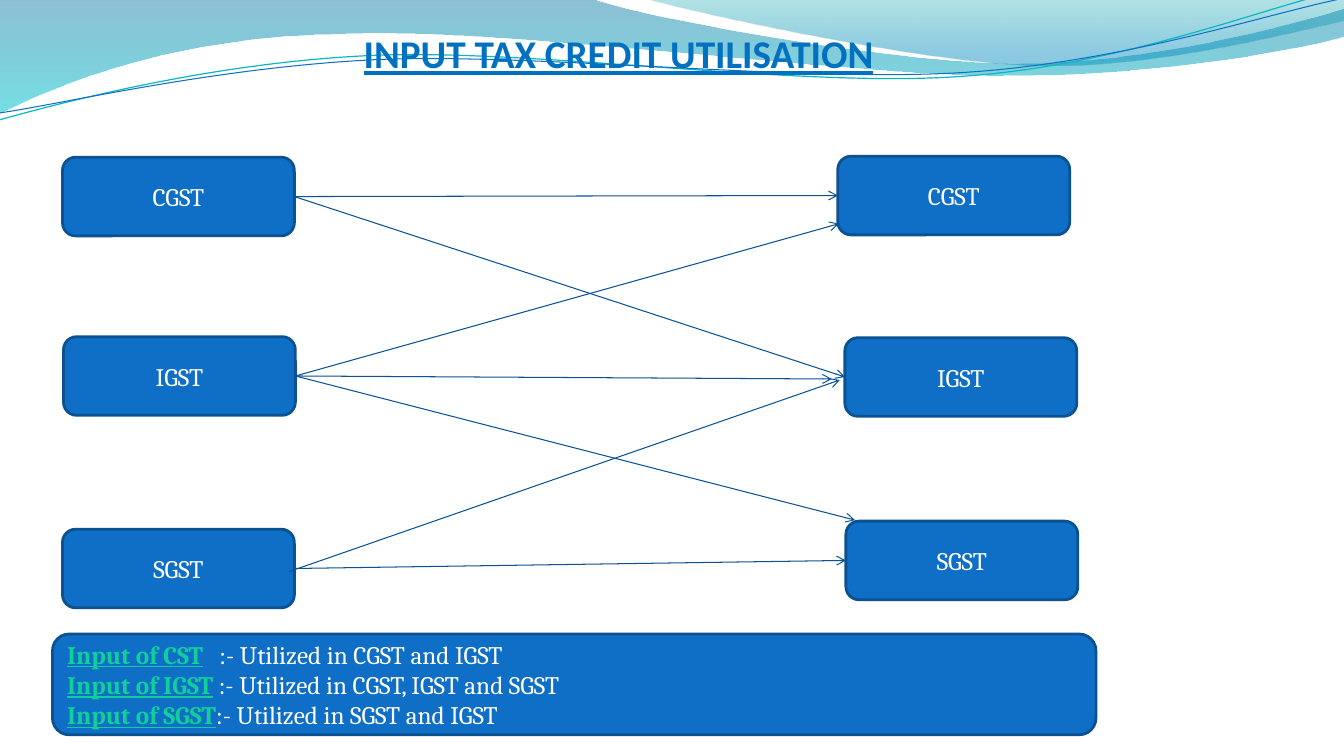
from lxml import etree
from pptx import Presentation
from pptx.dml.color import RGBColor
from pptx.enum.shapes import MSO_CONNECTOR as CONN, MSO_SHAPE as SHAPE
from pptx.enum.text import MSO_ANCHOR as ANCHOR, MSO_AUTO_SIZE as AUTO, PP_ALIGN as ALIGN
from pptx.oxml.ns import qn
from pptx.util import Inches, Pt

BLUE = RGBColor(0x0F, 0x6F, 0xC6)
BORDER = RGBColor(0x0B, 0x52, 0x92)
ARROW = RGBColor(0x09, 0x52, 0x95)
TITLE = RGBColor(0x00, 0x70, 0xC0)
GREEN = RGBColor(0x10, 0xCF, 0x9B)
WHITE = RGBColor(0xFF, 0xFF, 0xFF)
TEAL = RGBColor(0x0A, 0xB8, 0xBF)

BOX_W, BOX_H = 2.3, 0.78
LEFT, RIGHT = 1, 3  # connection sites

# Header outlines: a start point, then steps of one point (straight line)
# or three points (curve: control, control, end)
LOWER_WAVE = [
    [(0, 0)],
    [(5.87, -0.01)],
    [(6.34, 0.17), (8.85, 0.63), (10.11, 0.63)],
    [(11.38, 0.63), (12.78, 0.26), (13.33, 0.09)],
    [(13.35, 0.36)],
    [(13.11, 0.44), (11.6, 0.76), (9.94, 0.75)],
    [(8.29, 0.75), (5.09, 0.28), (3.43, 0.34)],
    [(1.72, 0.36), (0.61, 0.83), (-0.01, 1.13)],
    [(0, 0)],
]
UPPER_WAVE = [
    [(6.39, -0.01)],
    [(6.79, 0.11), (9.09, 0.62), (10.25, 0.65)],
    [(11.41, 0.69), (12.82, 0.32), (13.33, 0.21)],
    [(13.33, 0)],
    [(6.39, -0.01)],
]
TEAL_STRAND = [
    [(-0.01, 1.19)],
    [(0.64, 1.01), (2.11, 0.62), (3.69, 0.55)],
    [(5.27, 0.48), (7.9, 0.87), (9.5, 0.76)],
    [(11.1, 0.66), (12.52, 0.08), (13.31, -0.1)],
]
BLUE_STRAND = [
    [(0, 1.12)],
    [(0.63, 1.03), (2.18, 0.66), (3.78, 0.59)],
    [(5.37, 0.53), (7.96, 0.82), (9.55, 0.72)],
    [(11.15, 0.62), (12.55, 0.14), (13.34, -0.02)],
]

NOTES = [
    ("Input of CST", "\t:- Utilized in CGST and IGST"),
    ("Input of IGST", " :- Utilized in CGST, IGST and SGST"),
    ("Input of SGST", ":- Utilized in SGST and IGST"),
]


def add_outline(s, steps, close):
    steps = [[(Inches(x), Inches(y)) for x, y in step] for step in steps]
    builder = s.shapes.build_freeform(*steps[0][0])
    builder.add_line_segments([step[-1] for step in steps[1:]], close=close)
    sp = builder.convert_to_shape()
    sp.shadow.inherit = False
    # Bend the three-point steps into curves
    outline = next(sp._element.iter(qn("a:path")))
    for line, step in zip(outline.findall(qn("a:lnTo")), steps[1:]):
        if len(step) == 3:
            curve = etree.SubElement(outline, qn("a:cubicBezTo"))
            for x, y in step:
                etree.SubElement(curve, qn("a:pt"), x=str(x - sp.left), y=str(y - sp.top))
            outline.replace(line, curve)
    return sp


def add_wave(s, steps, stops):
    sp = add_outline(s, steps, True)
    sp.line.fill.background()
    sp.fill.gradient()
    sp.fill.gradient_angle = 270
    for stop, (position, color, _) in zip(sp.fill.gradient_stops, stops):
        stop.position = position
        stop.color.rgb = RGBColor.from_string(color)
    colors = sp._element.spPr.iter(qn("a:srgbClr"))
    for clr, (_, _, opacity) in zip(colors, stops):
        etree.SubElement(clr, qn("a:alpha"), val=str(opacity * 1000))


def add_strand(s, steps, color, width):
    sp = add_outline(s, steps, False)
    sp.fill.background()
    sp.line.color.rgb = color
    sp.line.width = Pt(width)


def add_run(p, text, color, **extra):
    r = p.add_run()
    r.text = text
    for name, value in {"size": Pt(18), "name": "Cambria", **extra}.items():
        setattr(r.font, name, value)
    r.font.color.rgb = color


def add_box(s, x, y, w=BOX_W, h=BOX_H):
    sp = s.shapes.add_shape(SHAPE.ROUNDED_RECTANGLE, Inches(x), Inches(y), Inches(w), Inches(h))
    sp.shadow.inherit = False
    sp.fill.solid()
    sp.fill.fore_color.rgb = BLUE
    sp.line.color.rgb = BORDER
    sp.line.width = Pt(2)
    sp.text_frame.vertical_anchor = ANCHOR.MIDDLE
    return sp


def add_tax_box(s, label, x, y):
    sp = add_box(s, x, y)
    p = sp.text_frame.paragraphs[0]
    p.alignment = ALIGN.CENTER
    add_run(p, label, WHITE)
    return sp


def add_arrow(s, start, end):
    """Each end is a box, joined at its side, or a point."""
    points = [Inches(v) for end_at in (start, end)
              for v in (end_at if isinstance(end_at, tuple) else (0, 0))]
    c = s.shapes.add_connector(CONN.STRAIGHT, *points)
    if not isinstance(start, tuple):
        c.begin_connect(start, RIGHT)
    if not isinstance(end, tuple):
        c.end_connect(end, LEFT)
    c.line.color.rgb = ARROW
    c.line.width = Pt(0.75)
    etree.SubElement(c.line._get_or_add_ln(), qn("a:tailEnd"), type="arrow")
    etree.SubElement(c._element.spPr, qn("a:effectLst"))


def add_title(s, text):
    sp = s.shapes.title
    s.shapes._spTree.append(sp._element)  # in front of the waves
    place = {"left": 0.08, "top": 0.12, "width": 12.11, "height": 0.64}
    for name, value in place.items():
        setattr(sp, name, Inches(value))
    tf = sp.text_frame
    frame = {"margin_left": 0, "margin_right": 0, "margin_top": Inches(0.05),
             "margin_bottom": 0, "vertical_anchor": ANCHOR.BOTTOM,
             "auto_size": AUTO.NONE, "word_wrap": True}
    for name, value in frame.items():
        setattr(tf, name, value)
    p = tf.paragraphs[0]
    p.alignment = ALIGN.CENTER
    add_run(p, text, TITLE, size=Pt(28), name="Calibri", bold=True, underline=True)


def add_notes_box(s):
    tf = add_box(s, 0.52, 6.29, 10.35, 1).text_frame
    for i, (head, use) in enumerate(NOTES):
        p = tf.add_paragraph() if i else tf.paragraphs[0]
        p.alignment = ALIGN.LEFT
        if use.startswith("\t"):
            tabs = etree.SubElement(p._p.get_or_add_pPr(), qn("a:tabLst"))
            etree.SubElement(tabs, qn("a:tab"), pos=str(Inches(1.51)), algn="l")
        add_run(p, head, GREEN, bold=True, underline=True)
        add_run(p, use, WHITE)


def main():
    prs = Presentation()
    prs.slide_width, prs.slide_height = Inches(13.33), Inches(7.5)
    s = prs.slides.add_slide(prs.slide_layouts[5])

    # Header
    add_wave(s, LOWER_WAVE, [(0, "0074A1", 45), (1, "00C6CF", 55)])
    add_wave(s, UPPER_WAVE, [(0, "00A1A9", 30), (0.8, "008BBF", 45)])
    add_strand(s, TEAL_STRAND, TEAL, 0.85)
    add_strand(s, BLUE_STRAND, BLUE, 0.75)
    add_title(s, "INPUT TAX CREDIT UTILISATION")

    # Input credits on the left, taxes they pay on the right
    cgst_in = add_tax_box(s, "CGST", 0.62, 1.56)
    igst_in = add_tax_box(s, "IGST", 0.63, 3.34)
    sgst_in = add_tax_box(s, "SGST", 0.62, 5.25)
    cgst_out = add_tax_box(s, "CGST", 8.31, 1.55)
    igst_out = add_tax_box(s, "IGST", 8.38, 3.35)
    sgst_out = add_tax_box(s, "SGST", 8.39, 5.17)

    # Permitted uses
    for start, end in [
        (cgst_in, cgst_out), (cgst_in, igst_out), (sgst_in, sgst_out),
        ((2.87, 5.67), (8.33, 3.77)), (igst_in, (8.32, 2.22)),
        (igst_in, (8.48, 5.16)), (igst_in, (8.25, 3.76)),
    ]:
        add_arrow(s, start, end)

    add_notes_box(s)
    prs.save("out.pptx")


if __name__ == "__main__":
    main()
